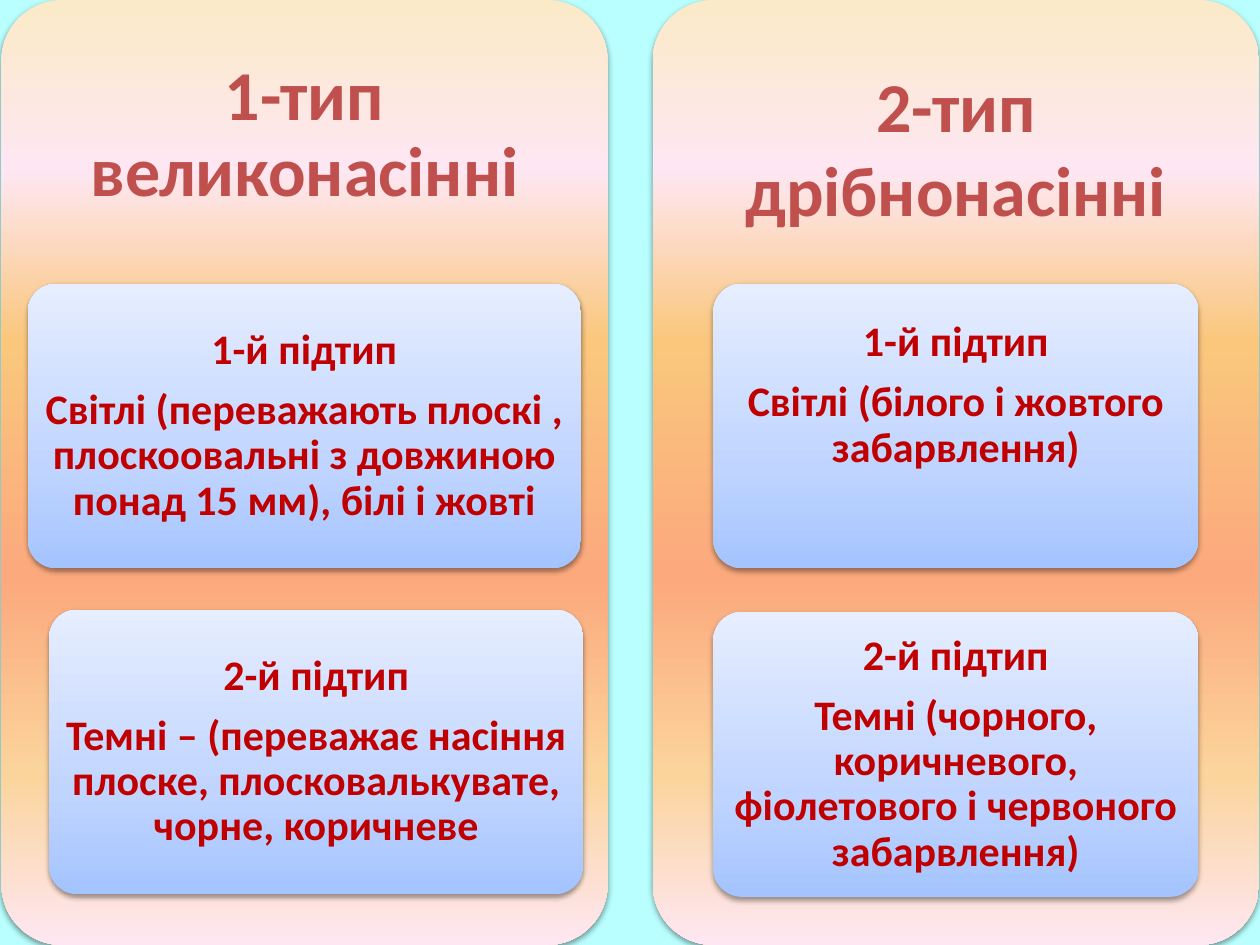
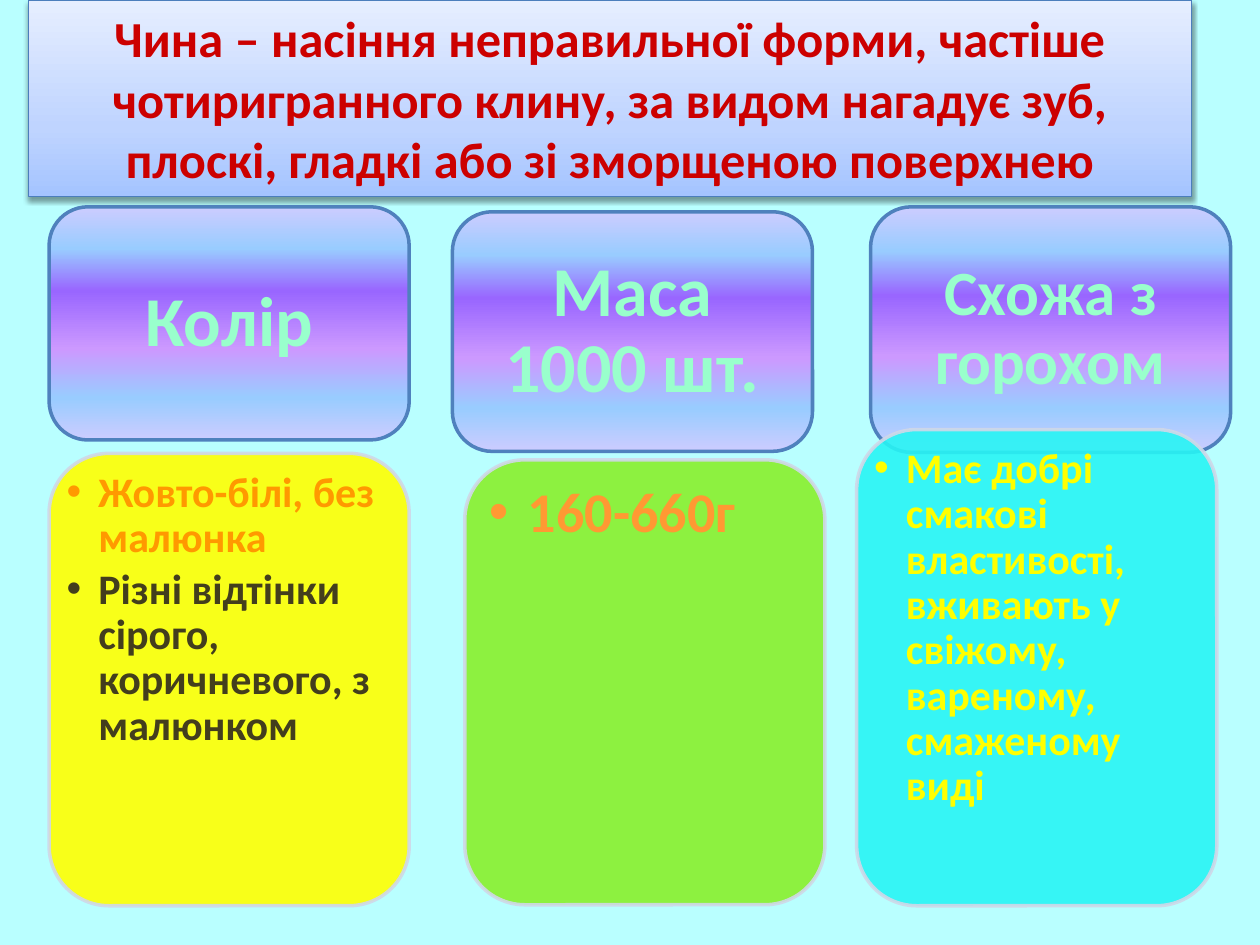
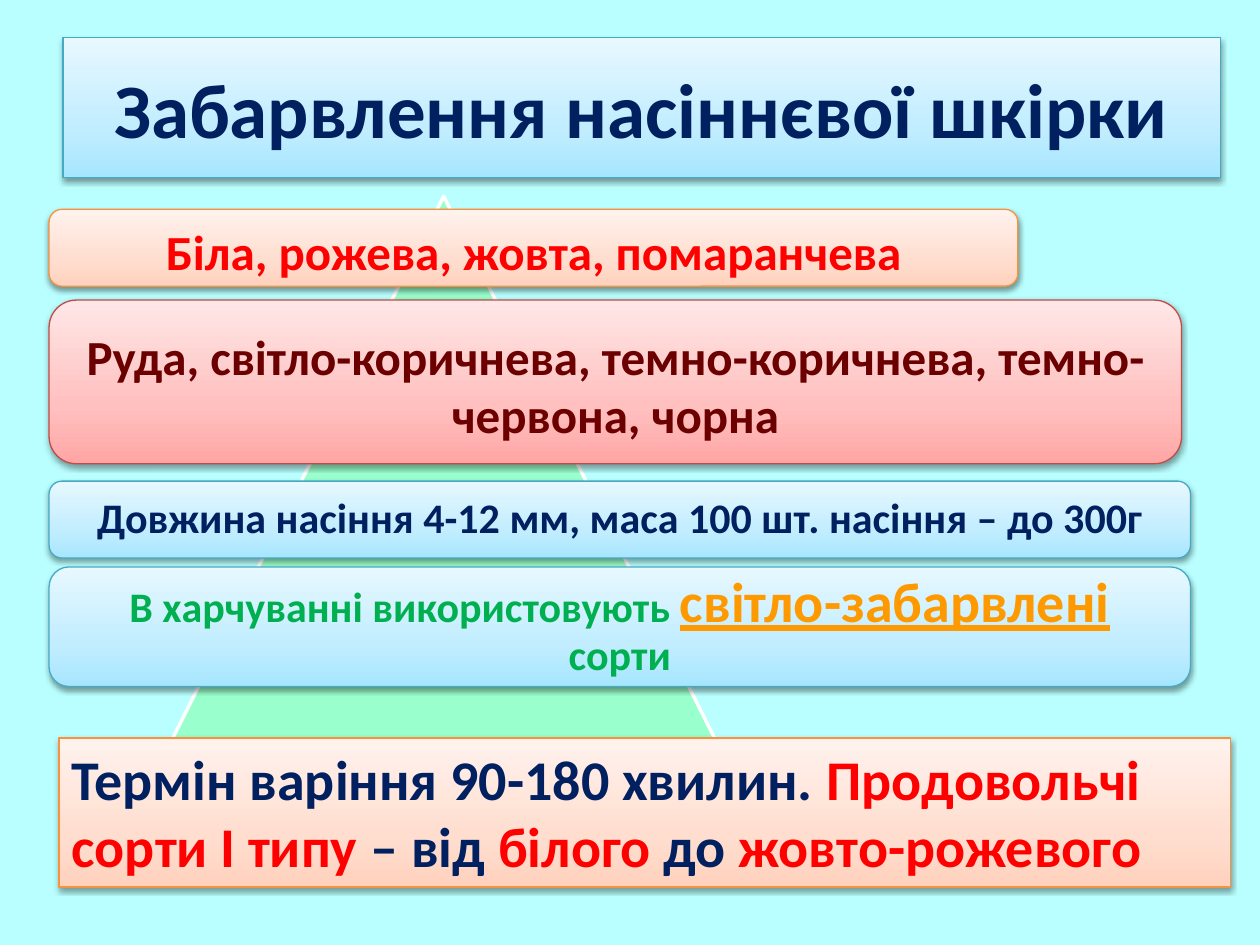
from dataclasses import dataclass
from typing import NamedTuple, Optional

from lxml.etree import SubElement
from pptx import Presentation
from pptx.dml.color import RGBColor
from pptx.enum.shapes import MSO_SHAPE as Preset
from pptx.enum.text import MSO_ANCHOR as Anchor, MSO_AUTO_SIZE as AutoSize, PP_ALIGN as Align
from pptx.oxml.ns import qn
from pptx.util import Cm, Pt

FONT = "Calibri"
BACKGROUND = RGBColor(0xB9, 0xFF, 0xFF)
WHITE = RGBColor(0xFF, 0xFF, 0xFF)
BLACK = RGBColor(0x00, 0x00, 0x00)
BRICK = RGBColor(0xC0, 0x50, 0x4D)
DARK_RED = RGBColor(0xC0, 0x00, 0x00)
CRIMSON = RGBColor(0xCC, 0x00, 0x00)
RED = RGBColor(0xFF, 0x00, 0x00)
MAROON = RGBColor(0x6C, 0x00, 0x00)
NAVY = RGBColor(0x00, 0x20, 0x60)
GREEN = RGBColor(0x00, 0xB0, 0x50)
MINT = RGBColor(0x99, 0xFF, 0xCC)
ORANGE = RGBColor(0xFF, 0x99, 0x00)
LIGHT_ORANGE = RGBColor(0xFF, 0x99, 0x33)
OLIVE = RGBColor(0x43, 0x3E, 0x1D)
YELLOW = RGBColor(0xFF, 0xFF, 0x00)
LIME = RGBColor(0x89, 0xF0, 0x2C)
CYAN = RGBColor(0x28, 0xF4, 0xF4)
PALE_EDGE = RGBColor(0xD0, 0xD8, 0xE8)
BLUE_EDGE = RGBColor(0x4F, 0x81, 0xBD)
STEEL_EDGE = RGBColor(0x4B, 0x7E, 0xBC)
AQUA_EDGE = RGBColor(0x46, 0xAA, 0xC5)
ORANGE_EDGE = RGBColor(0xF6, 0x92, 0x40)
RED_EDGE = RGBColor(0xBF, 0x4C, 0x48)


class Box(NamedTuple):
    left: float
    top: float
    width: float
    height: float


class Insets(NamedTuple):
    left: float = 0
    top: float = 0
    right: float = 0
    bottom: float = 0


class Gradient(NamedTuple):
    positions: tuple[int, ...]
    colors: tuple[RGBColor, ...]
    angle: int


@dataclass(frozen=True)
class Style:
    gradient: Optional[Gradient] = None
    color: Optional[RGBColor] = None
    edge: Optional[RGBColor] = None
    edge_width: float = 0.75
    opacity: int = 100
    shadow: bool = True


@dataclass(frozen=True)
class Piece:
    text: str
    size: float
    color: RGBColor
    underline: bool = False


@dataclass(frozen=True)
class Line:
    pieces: tuple[Piece, ...]
    align: Align = Align.CENTER
    spacing: float = 0.9
    after: float = 0
    bullet_indent: float = 0


def palette(*codes: str) -> tuple[RGBColor, ...]:
    return tuple(RGBColor.from_string(code) for code in codes)


def upward(*codes: str) -> Gradient:
    return Gradient((0, 35, 100), palette(*codes), 90)


def downward(*codes: str) -> Gradient:
    return Gradient((0, 18, 36, 61, 82, 100), palette(*codes), 270)


BLUE = upward("A4C4FF", "BFD4FF", "E6EEFF")
AQUA = upward("A7E6FF", "C1EDFF", "E7F8FF")
PEACH = upward("FFD2BD", "FFDED0", "FFF2ED")
ROSE = upward("FFA6A5", "FFC0BF", "FFE7E7")
SUNSET = downward("FBEAC7", "FEE7F2", "FAC77D", "FBA97D", "FBD49C", "FEE7F2")
VIOLET = downward("CCCCFF", "99CCFF", "9966FF", "CC99FF", "99CCFF", "CCCCFF")

PANEL = Style(SUNSET)
CARD = Style(BLUE)
HEAD = Style(VIOLET, edge=BLUE_EDGE, edge_width=2, shadow=False)
BLUE_BAND = Style(BLUE, edge=STEEL_EDGE)
AQUA_BAND = Style(AQUA, edge=AQUA_EDGE)
PEACH_BAND = Style(PEACH, edge=ORANGE_EDGE)
ROSE_BAND = Style(ROSE, edge=RED_EDGE)
PYRAMID = Style(color=MINT, edge=WHITE, edge_width=2, shadow=False)
DEFAULT_INSETS = Insets(0.25, 0.13, 0.25, 0.13)


def glass(color: RGBColor) -> Style:
    return Style(color=color, edge=PALE_EDGE, edge_width=2, opacity=90, shadow=False)


def add_color(parent, color: RGBColor, opacity: int = 100) -> None:
    element = SubElement(parent, qn("a:srgbClr"), val=str(color))
    if opacity < 100:
        SubElement(element, qn("a:alpha"), val=str(opacity * 1000))


def apply_style(shape, style: Style) -> None:
    properties = shape._element.spPr
    if style.gradient:
        shape.fill.gradient()
        shape.fill.gradient_angle = style.gradient.angle
        stops = properties.find(qn("a:gradFill")).find(qn("a:gsLst"))
        stops.clear()
        for position, color in zip(style.gradient.positions, style.gradient.colors):
            add_color(SubElement(stops, qn("a:gs"), pos=str(position * 1000)), color)
    else:
        shape.fill.solid()
        shape.fill.fore_color.rgb = style.color
    if style.edge:
        shape.line.color.rgb = style.edge
        shape.line.width = Pt(style.edge_width)
    else:
        shape.line.fill.background()
    if style.opacity < 100:
        for element in list(properties.iter(qn("a:srgbClr"))):
            SubElement(element, qn("a:alpha"), val=str(style.opacity * 1000))
    shape.shadow.inherit = False
    if style.shadow:
        effects = properties.find(qn("a:effectLst"))
        shadow = SubElement(effects, qn("a:outerShdw"), blurRad="40000", dist="20000",
                            dir="5400000", rotWithShape="0")
        add_color(shadow, BLACK, 38)


def write(shape, lines: list[Line], insets: Insets, anchor: Anchor = Anchor.MIDDLE) -> None:
    frame = shape.text_frame
    frame.word_wrap = True
    frame.auto_size = AutoSize.NONE
    frame.vertical_anchor = anchor
    frame.margin_left, frame.margin_top, frame.margin_right, frame.margin_bottom = map(Cm, insets)
    for index, line in enumerate(lines):
        paragraph = frame.add_paragraph() if index else frame.paragraphs[0]
        if line.bullet_indent:
            properties = paragraph._p.get_or_add_pPr()
            properties.set("marL", str(Cm(line.bullet_indent)))
            properties.set("indent", str(-Cm(line.bullet_indent)))
            SubElement(properties, qn("a:buFont"), typeface="Arial")
            SubElement(properties, qn("a:buChar"), char="•")
        paragraph.alignment = line.align
        paragraph.line_spacing = line.spacing
        paragraph.space_after = Pt(line.after)
        for piece in line.pieces:
            run = paragraph.add_run()
            run.text = piece.text
            run.font.name = FONT
            run.font.size = Pt(piece.size)
            run.font.bold = True
            run.font.color.rgb = piece.color
            if piece.underline:
                run.font.underline = True


def add_block(slide, preset: Preset, box: Box, style: Style, corner: Optional[float] = None):
    shape = slide.shapes.add_shape(preset, *map(Cm, box))
    if corner is not None:
        shape.adjustments[0] = corner
    apply_style(shape, style)
    return shape


def set_title(slide, box: Box, style: Style, piece: Piece) -> None:
    title = slide.shapes.title
    title.left, title.top, title.width, title.height = map(Cm, box)
    apply_style(title, style)
    write(title, [Line((piece,), spacing=1)], DEFAULT_INSETS)


class Subtype(NamedTuple):
    box: Box
    name: str
    description: str
    bottom_inset: float = 0


class SeedType(NamedTuple):
    left: float
    title: str
    title_spacing: float
    title_insets: Insets
    subtypes: tuple[Subtype, ...]


CARD_HEIGHT = 5.74
SEED_TYPES = (
    SeedType(0.03, "1-тип великонасінні", 0.9, Insets(0.43, 0.2, 0.43, 0.43), (
        Subtype(Box(0.56, 5.72, 11.15, CARD_HEIGHT), "1-й підтип",
                "Світлі (переважають плоскі , плоскоовальні з довжиною понад 15 мм), білі і жовті"),
        Subtype(Box(0.99, 12.29, 10.77, CARD_HEIGHT), "2-й підтип",
                "Темні – (переважає насіння плоске, плосковалькувате, чорне, коричневе"),
    )),
    SeedType(13.16, "2-тип дрібнонасінні", 1, Insets(0.43, 0.6, 0.43, 0.43), (
        Subtype(Box(14.38, 5.72, 9.78, CARD_HEIGHT), "1-й підтип",
                "Світлі (білого і жовтого забарвлення)", 1.22),
        Subtype(Box(14.38, 12.34, 9.78, CARD_HEIGHT), "2-й підтип",
                "Темні (чорного, коричневого, фіолетового і червоного забарвлення)"),
    )),
)


def build_seed_types(slide) -> None:
    for seed_type in SEED_TYPES:
        panel = Box(seed_type.left, 0, 12.22, 19.05)
        add_block(slide, Preset.ROUNDED_RECTANGLE, panel, PANEL, 0.1)
        heading = slide.shapes.add_textbox(*map(Cm, panel._replace(height=5.72)))
        write(heading, [Line((Piece(seed_type.title, 40, BRICK),), spacing=seed_type.title_spacing)],
              seed_type.title_insets)
        for subtype in seed_type.subtypes:
            card = add_block(slide, Preset.ROUNDED_RECTANGLE, subtype.box, CARD, 0.1)
            lines = [Line((Piece(text, 24, DARK_RED),), after=8.4)
                     for text in (subtype.name, subtype.description)]
            write(card, lines, Insets(bottom=subtype.bottom_inset))


class Feature(NamedTuple):
    head: Box
    name: str
    name_size: int
    body: Box
    body_color: RGBColor
    bullets: tuple[Piece, ...]


COLUMN_WIDTH = 7.26
FEATURES = (
    Feature(Box(0.99, 4.17, COLUMN_WIDTH, 4.7), "Колір", 40,
            Box(0.99, 9.14, COLUMN_WIDTH, 9.12), YELLOW,
            (Piece("Жовто-білі, без малюнка", 24, ORANGE),
             Piece("Різні відтінки сірого, коричневого, з малюнком", 24, OLIVE))),
    Feature(Box(9.12, 4.27, COLUMN_WIDTH, 4.83), "Маса 1000 шт.", 40,
            Box(9.37, 9.27, COLUMN_WIDTH, 8.97), LIME,
            (Piece("160-660г", 32, LIGHT_ORANGE),)),
    Feature(Box(17.55, 4.17, COLUMN_WIDTH, 4.95), "Схожа з горохом", 36,
            Box(17.27, 8.66, COLUMN_WIDTH, 9.6), CYAN,
            (Piece("Має добрі смакові властивості, вживають у свіжому, вареному, смаженому виді",
                   24, YELLOW),)),
)


def build_features(slide) -> None:
    set_title(slide, Box(0.58, 0, 23.44, 3.96), BLUE_BAND,
              Piece("Чина – насіння неправильної форми, частіше чотиригранного клину, за видом "
                    "нагадує зуб, плоскі, гладкі або зі зморщеною поверхнею", 28.8, CRIMSON))
    for feature in FEATURES:
        head = add_block(slide, Preset.ROUNDED_RECTANGLE, feature.head, HEAD)
        write(head, [Line((Piece(feature.name, feature.name_size, MINT),))],
              Insets(0.5, 0.2, 0.5, 0.2))
        body = add_block(slide, Preset.ROUNDED_RECTANGLE, feature.body, glass(feature.body_color))
        large = feature.bullets[0].size > 24
        lines = [Line((piece,), Align.LEFT, after=piece.size * 0.15,
                      bullet_indent=0.79 if large else 0.64) for piece in feature.bullets]
        insets = Insets(0.13, 0.13, 0.28, 0.36) if large else Insets(0, 0, 0.13, 0.18)
        write(body, lines, insets, Anchor.TOP)


class Bar(NamedTuple):
    top: float
    width: float
    height: float
    style: Style
    pieces: tuple[Piece, ...]
    spacing: float
    insets: Insets


BARS = (
    Bar(4.22, 19.53, 1.55, PEACH_BAND,
        (Piece("Біла, рожева, жовта, помаранчева", 28, RED),), 1, Insets(0.23, 0.12, 0.23)),
    Bar(6.05, 22.83, 3.3, ROSE_BAND,
        (Piece("Руда, світло-коричнева, темно-коричнева, темно-червона, чорна", 28, MAROON),),
        1, Insets(0.15, 0.12, 0.15)),
    Bar(9.7, 23.01, 1.55, AQUA_BAND,
        (Piece("Довжина насіння 4-12 мм, маса 100 шт. насіння – до 300г", 24, NAVY),),
        0.9, Insets(0.18, 0, 0.18)),
    Bar(11.43, 23.01, 2.41, AQUA_BAND,
        (Piece("В харчуванні використовують ", 24, GREEN),
         Piece("світло-забарвлені ", 32, ORANGE, True),
         Piece("сорти", 24, GREEN)), 0.9, Insets(1.2, 0, 1.2)),
)
COOKING = (
    Piece("Термін варіння 90-180 хвилин. ", 32, NAVY),
    Piece("Продовольчі сорти І типу ", 32, RED),
    Piece("– від ", 32, NAVY),
    Piece("білого", 32, RED),
    Piece(" до ", 32, NAVY),
    Piece("жовто-рожевого", 32, RED),
)


def build_coat_colors(slide) -> None:
    set_title(slide, Box(1.27, 0.76, 23.34, 2.82), AQUA_BAND,
              Piece("Забарвлення насіннєвої шкірки", 44, NAVY))
    add_block(slide, Preset.ISOSCELES_TRIANGLE, Box(3.38, 3.96, 11.13, 11.13), PYRAMID)
    for bar in BARS:
        shape = add_block(slide, Preset.ROUNDED_RECTANGLE,
                          Box(0.99, bar.top, bar.width, bar.height), bar.style)
        write(shape, [Line(bar.pieces, spacing=bar.spacing)], bar.insets)
    note = add_block(slide, Preset.RECTANGLE, Box(1.19, 14.88, 23.62, 3), PEACH_BAND)
    write(note, [Line(COOKING, Align.LEFT, spacing=1)], DEFAULT_INSETS, Anchor.TOP)


def main() -> None:
    presentation = Presentation()
    presentation.slide_width, presentation.slide_height = Cm(25.4), Cm(19.05)
    background = presentation.slide_master.background.fill
    background.solid()
    background.fore_color.rgb = BACKGROUND
    title_only, blank = presentation.slide_layouts[5], presentation.slide_layouts[6]
    for layout, build in ((blank, build_seed_types), (title_only, build_features),
                          (title_only, build_coat_colors)):
        build(presentation.slides.add_slide(layout))
    presentation.save("out.pptx")


if __name__ == "__main__":
    main()
